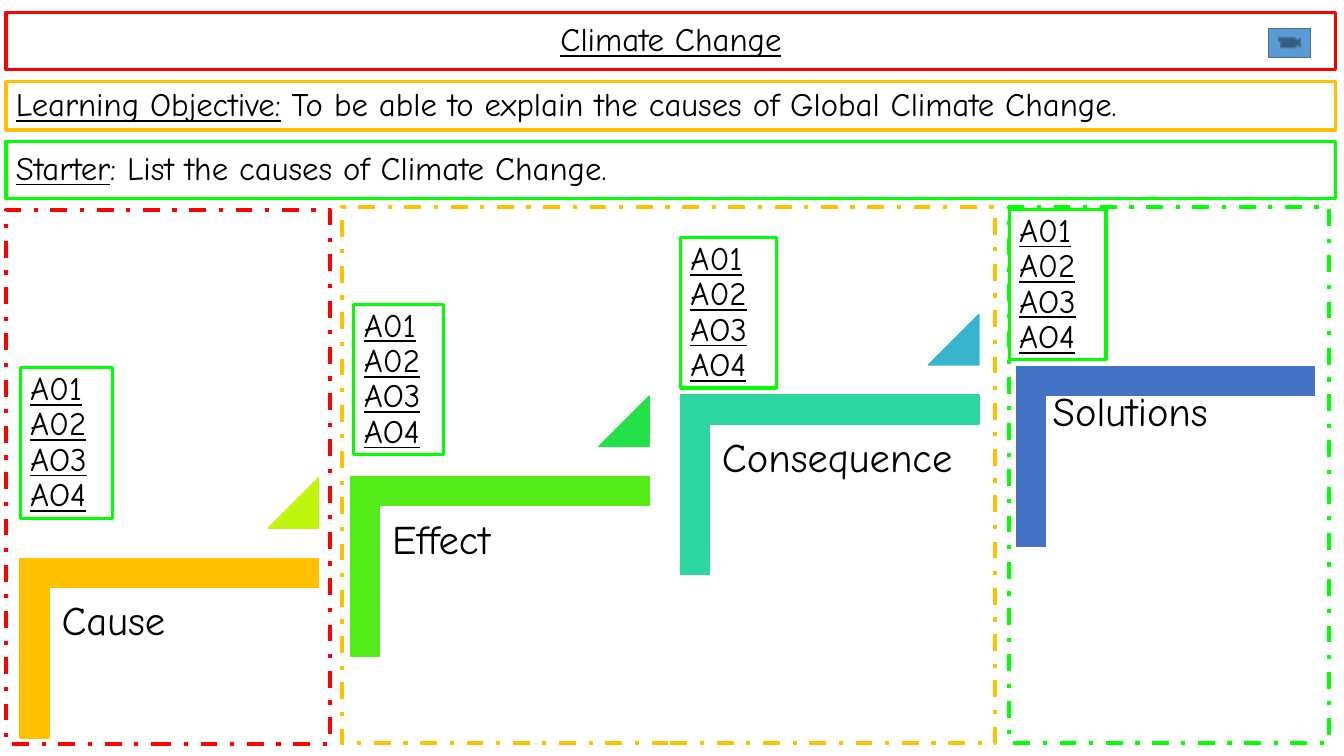
from pptx import Presentation
from pptx.dml.color import RGBColor
from pptx.enum import dml, shapes, text
from pptx.util import Inches, Pt

COLORS = {
    "white": "FFFFFF", "black": "000000", "red": "FF0000", "amber": "FFC000",
    "green": "00FF00", "lime": "BEF50C", "leaf": "53EB17", "emerald": "23E148",
    "teal": "2ED7A1", "cyan": "39B6CE", "blue": "4472C4",
    "button": "5B9BD5", "button edge": "43739E",
}
BAR_LEFT, BAR_WIDTH = 0.06, 13.19


def paint(shape, fill, line, weight):
    if fill:
        shape.fill.solid()
        shape.fill.fore_color.rgb = RGBColor.from_string(COLORS[fill])
    else:
        shape.fill.background()
    shape.line.color.rgb = RGBColor.from_string(COLORS[line])
    shape.line.width = Pt(weight)


def write(frame, lines, size, align=text.PP_ALIGN.LEFT, anchor=text.MSO_ANCHOR.MIDDLE):
    frame.word_wrap = True
    frame.auto_size = text.MSO_AUTO_SIZE.NONE
    frame.vertical_anchor = anchor
    for index, pieces in enumerate(lines):
        paragraph = frame.add_paragraph() if index else frame.paragraphs[0]
        paragraph.alignment = align
        paragraph.line_spacing = 0.9
        for wording, underlined in pieces:
            run = paragraph.add_run()
            run.text = wording
            run.font.name = "Comic Neue"
            run.font.size = Pt(size)
            run.font.underline = underlined
            run.font.color.rgb = RGBColor.from_string(COLORS["black"])


prs = Presentation()
prs.slide_width, prs.slide_height = Inches(13.33), Inches(7.5)
slide = prs.slides.add_slide(prs.slide_layouts[5])
add_shape = slide.shapes.add_shape

heading = slide.shapes.title
heading.left, heading.top = Inches(BAR_LEFT), Inches(0.12)
heading.width, heading.height = Inches(BAR_WIDTH), Inches(0.57)
paint(heading, "white", "red", 2.25)
write(heading.text_frame, [[("Climate Change", True)]], 23.4, text.PP_ALIGN.CENTER)

bars = [
    (0.81, 0.48, "amber", "Learning Objective:",
     " To be able to explain the causes of Global Climate Change."),
    (1.4, 0.57, "green", "Starter", ": List the causes of Climate Change."),
]
for top, height, color, lead, task in bars:
    bar = add_shape(shapes.MSO_SHAPE.RECTANGLE, Inches(BAR_LEFT), Inches(top),
                    Inches(BAR_WIDTH), Inches(height))
    bar.shadow.inherit = False
    paint(bar, "white", color, 2.25)
    write(bar.text_frame, [[(lead, True), (task, False)]], 23.4)

steps = [
    ("Cause", 0.79, 4.95, "amber", 0.49, 5.84, "lime"),
    ("Effect", 4.07, 4.14, "leaf", 3.77, 5.03, "emerald"),
    ("Consequence", 7.34, 3.33, "teal", 7.04, 4.22, "cyan"),
    ("Solutions", 10.67, 3.05, "blue", 10.32, 3.76, None),
]
for name, left, top, color, label_left, label_top, riser_color in steps:
    stair = add_shape(shapes.MSO_SHAPE.CORNER, Inches(left), Inches(top),
                      Inches(1.78), Inches(2.96))
    stair.rotation = 90
    stair.adjustments[0] = stair.adjustments[1] = 0.161
    stair.shadow.inherit = False
    paint(stair, color, color, 1)

    label = slide.shapes.add_textbox(Inches(label_left), Inches(label_top),
                                     Inches(2.68), Inches(2.35)).text_frame
    label.margin_left = label.margin_right = Inches(0.12)
    label.margin_top = label.margin_bottom = Inches(0.12)
    write(label, [[(name, False)]], 29, anchor=text.MSO_ANCHOR.TOP)

    if riser_color:
        riser = add_shape(shapes.MSO_SHAPE.ISOSCELES_TRIANGLE, Inches(left + 1.87),
                          Inches(top - 0.21), Inches(0.5), Inches(0.5))
        riser.adjustments[0] = 1
        riser.shadow.inherit = False
        paint(riser, riser_color, riser_color, 1)

panels = [
    (0.06, 2.08, 3.21, 5.3, "red"),
    (3.39, 2.05, 6.48, 5.32, "amber"),
    (10.01, 2.05, 3.17, 5.32, "green"),
]
for left, top, width, height, color in panels:
    panel = add_shape(shapes.MSO_SHAPE.RECTANGLE, Inches(left), Inches(top),
                      Inches(width), Inches(height))
    panel.shadow.inherit = False
    paint(panel, None, color, 3)
    panel.line.dash_style = dml.MSO_LINE.DASH_DOT

movie_button = add_shape(shapes.MSO_SHAPE.ACTION_BUTTON_MOVIE, Inches(12.58), Inches(0.28),
                         Inches(0.42), Inches(0.29))
movie_button.shadow.inherit = False
paint(movie_button, "button", "button edge", 1)

objectives = [[(code, True)] for code in ("A01", "A02", "AO3", "AO4")]
for left, top, width in [(3.51, 3.02, 0.89), (0.2, 3.65, 0.92),
                         (6.75, 2.36, 0.95), (10.01, 2.08, 0.96)]:
    checklist = add_shape(shapes.MSO_SHAPE.RECTANGLE, Inches(left), Inches(top),
                          Inches(width), Inches(1.49))
    checklist.shadow.inherit = False
    paint(checklist, "white", "green", 2.25)
    write(checklist.text_frame, objectives, 23.4)

prs.save("out.pptx")
